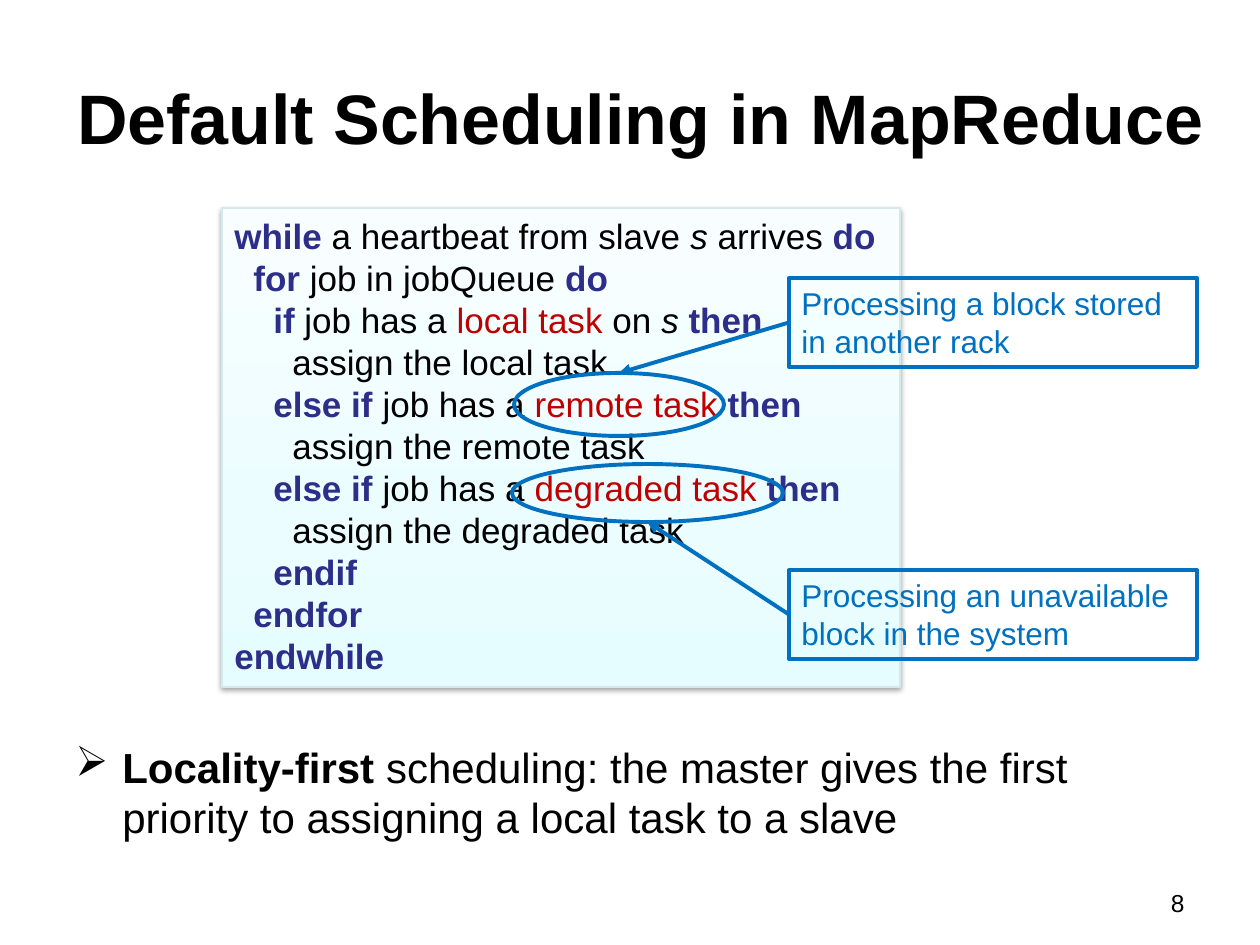
from copy import deepcopy
from dataclasses import dataclass

from lxml import etree
from pptx import Presentation
from pptx import util as u
from pptx.dml.color import RGBColor
from pptx.enum import shapes, text
from pptx.oxml.ns import qn

PX = 914400 / 126


@dataclass(frozen=True)
class Theme:
    """Colours, type sizes and line widths of the slide."""
    font: str = "Arial"
    ink: str = "000000"
    keyword: str = "2D2D8A"
    task: str = "C00000"
    accent: str = "0070C0"
    edge: str = "D5E8EA"
    panel: tuple = ((0, "E6FDFF"), (0.35, "ECFDFF"), (1, "F8FEFF"))
    title: int = 40
    body: int = 24
    code: int = 20
    note: int = 18
    number: int = 14
    leading: float = 1.2
    thin: float = 0.75
    thick: float = 2.25


T = Theme()
STYLES = {
    "plain": {"color": T.ink},
    "bold": {"color": T.ink, "bold": True},
    "var": {"color": T.ink, "italic": True},
    "key": {"color": T.keyword, "bold": True},
    "task": {"color": T.task},
    "note": {"color": T.accent},
}
CODE = [
    (0, [("while", "key"), (" a heartbeat from slave ", "plain"), ("s", "var"),
         (" arrives ", "plain"), ("do", "key")]),
    (1, [("for", "key"), (" job in jobQueue ", "plain"), ("do", "key")]),
    (2, [("if", "key"), (" job has a ", "plain"), ("local task ", "task"),
         ("on ", "plain"), ("s ", "var"), ("then", "key")]),
    (3, [("assign the local task", "plain")]),
    (2, [("else if ", "key"), ("job has a ", "plain"), ("remote task ", "task"), ("then", "key")]),
    (3, [("assign the remote task", "plain")]),
    (2, [("else if ", "key"), ("job has a ", "plain"), ("degraded task ", "task"), ("then", "key")]),
    (3, [("assign the degraded task", "plain")]),
    (2, [("endif", "key")]),
    (1, [("endfor", "key")]),
    (0, [("endwhile", "key")]),
]


def px(*values):
    """Turn pixel lengths into EMU."""
    return [u.Emu(round(v * PX)) for v in values]


def assign(obj, values):
    """Set each named attribute on an object."""
    for name, value in values.items():
        setattr(obj, name, value)


def write(sp, paragraphs, size, align=text.PP_ALIGN.LEFT, anchor=text.MSO_ANCHOR.TOP):
    """Fill a shape with paragraphs of styled runs and return the paragraphs."""
    tf = sp.text_frame
    assign(tf, {"word_wrap": True, "auto_size": text.MSO_AUTO_SIZE.NONE,
                "vertical_anchor": anchor})
    for i, runs in enumerate(paragraphs):
        p = tf.paragraphs[0] if i == 0 else tf.add_paragraph()
        assign(p, {"alignment": align, "line_spacing": u.Pt(size * T.leading)})
        for words, style in runs:
            r = p.add_run()
            r.text = words
            look = dict(STYLES[style])
            r.font.color.rgb = RGBColor.from_string(look.pop("color"))
            assign(r.font, {"name": T.font, "size": u.Pt(size), "bold": False, **look})
    return tf.paragraphs


def stroke(sp, color, width):
    """Give a shape or connector a solid line."""
    sp.line.color.rgb = RGBColor.from_string(color)
    sp.line.width = u.Pt(width)


def outlined(parent, kind, box):
    """Add an unfilled shape with the accent outline."""
    sp = parent.add_shape(kind, *px(*box))
    sp.shadow.inherit = False
    sp.fill.background()
    stroke(sp, T.accent, T.thick)
    return sp


def add_title(s, box, words):
    """Place and format the title placeholder."""
    sp = s.shapes.title
    assign(sp, dict(zip(("left", "top", "width", "height"), px(*box))))
    write(sp, [[(words, "bold")]], T.title, text.PP_ALIGN.CENTER, text.MSO_ANCHOR.MIDDLE)


def add_code(s, box, lines):
    """Draw the shaded panel with indented pseudocode."""
    sp = s.shapes.add_shape(shapes.MSO_SHAPE.RECTANGLE, *px(*box))
    stroke(sp, T.edge, T.thin)
    sp.fill.gradient()
    sp.fill.gradient_angle = 90
    first = next(sp._element.iter(qn("a:gs")))
    first.addnext(deepcopy(first))
    for stop, (position, color) in zip(sp.fill.gradient_stops, T.panel):
        stop.color.rgb = RGBColor.from_string(color)
        stop.position = position
    sp.shadow.inherit = False
    effects = sp._element.spPr.find(qn("a:effectLst"))
    shadow = etree.SubElement(effects, qn("a:outerShdw"), blurRad="40000", dist="20000",
                              dir="5400000", rotWithShape="0")
    black = etree.SubElement(shadow, qn("a:srgbClr"), val="000000")
    etree.SubElement(black, qn("a:alpha"), val="38000")
    paragraphs = write(sp, [runs for _, runs in lines], T.code)
    for p, (level, _) in zip(paragraphs, lines):
        p._p.get_or_add_pPr().set("marL", str(px(39 * level // 2)[0]))


def add_callout(s, box, oval_size, lines, note_above):
    """Ring a task at the left of the box and link it to a note at the right."""
    x, y, w, h = box
    oval_w, oval_h = oval_size
    note_w, note_h = 408, 89
    note_y, oval_y = (y, y + h - oval_h) if note_above else (y + h - note_h, y)
    tip_y = oval_y if note_above else oval_y + oval_h
    group = s.shapes.add_group_shape().shapes
    outlined(group, shapes.MSO_SHAPE.OVAL, (x, oval_y, oval_w, oval_h))
    note_x = x + w - note_w
    note = outlined(group, shapes.MSO_SHAPE.RECTANGLE, (note_x, note_y, note_w, note_h))
    write(note, [[(line, "note")] for line in lines], T.note)
    arrow = group.add_connector(shapes.MSO_CONNECTOR.STRAIGHT,
                                *px(note_x, note_y + note_h / 2, x + oval_w / 2, tip_y))
    arrow.begin_connect(note, 1)
    stroke(arrow, T.accent, T.thick)
    etree.SubElement(arrow.line._get_or_add_ln(), qn("a:tailEnd"), type="triangle")
    etree.SubElement(arrow._element.spPr, qn("a:effectLst"))


def add_bullet(s, box, runs):
    """Write the summary point with an arrow bullet."""
    sp = s.shapes.add_textbox(*px(*box))
    p = write(sp, [runs], T.body)[0]
    pPr = p._p.get_or_add_pPr()
    hang = px(47)[0]
    pPr.set("marL", str(hang))
    pPr.set("indent", str(-hang))
    etree.SubElement(pPr, qn("a:buChar"), char="➢")


def add_number(s, box, words):
    """Write the page number at the right of its box."""
    write(s.shapes.add_textbox(*px(*box)), [[(words, "plain")]], T.number, text.PP_ALIGN.RIGHT)


def main():
    """Build and save the slide."""
    prs = Presentation()
    prs.slide_width, prs.slide_height = px(1260, 945)
    s = prs.slides.add_slide(prs.slide_layouts[5])
    add_title(s, (42, 38, 1197, 158), "Default Scheduling in MapReduce")
    add_bullet(s, (63, 735, 1134, 142), [
        ("Locality-first", "bold"),
        (" scheduling: the master gives the first priority to assigning a local task to a slave",
         "plain")])
    add_number(s, (903, 882, 294, 44), "8")
    add_code(s, (222, 208, 678, 479), CODE)
    add_callout(s, (514, 278, 683, 158), (210, 63),
                ["Processing a block stored", "in another rack"], True)
    add_callout(s, (512, 464, 685, 195), (271, 58),
                ["Processing an unavailable block in the system"], False)
    prs.save("out.pptx")


if __name__ == "__main__":
    main()
